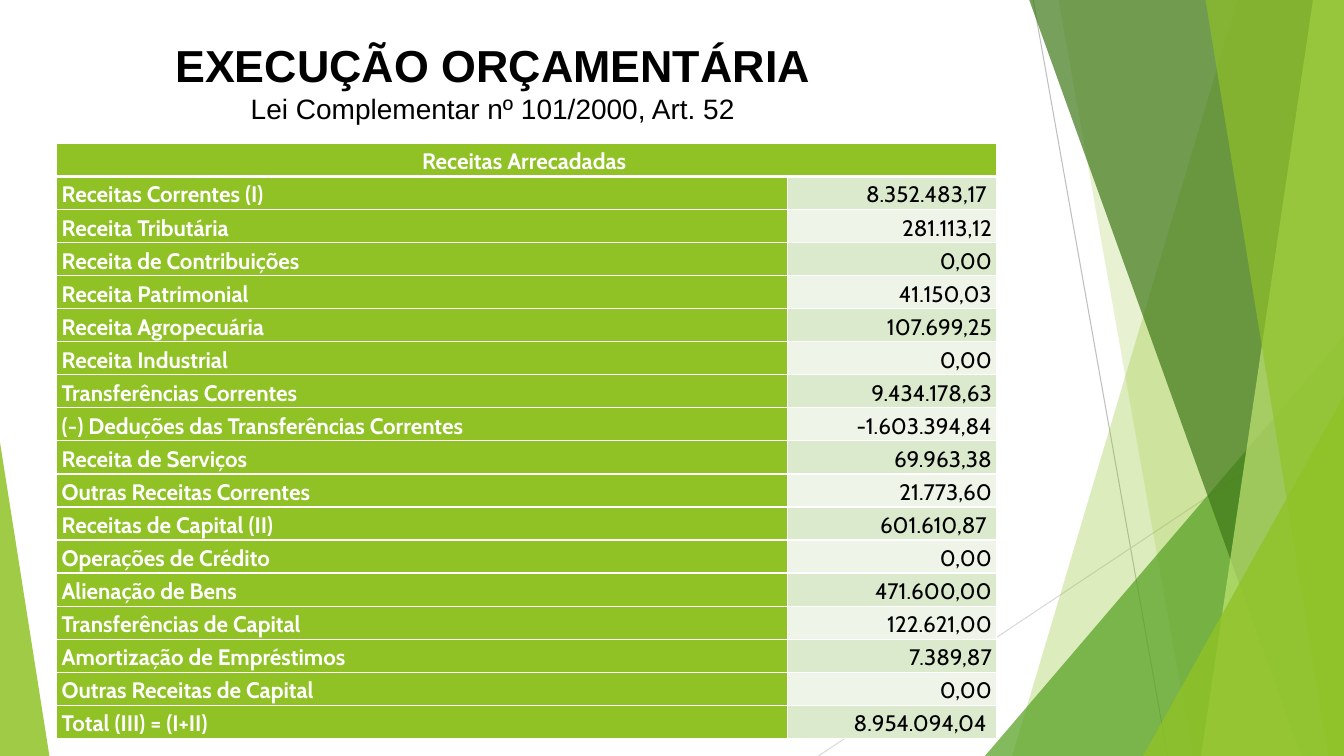
"""Builds the budget execution slide with its table of collected revenue."""
from lxml import etree
from pptx import Presentation
from pptx.dml.color import RGBColor
from pptx.enum.shapes import MSO_CONNECTOR, MSO_SHAPE
from pptx.enum.text import MSO_ANCHOR, MSO_AUTO_SIZE, PP_ALIGN
from pptx.oxml.ns import qn
from pptx.util import Pt

LEFT, CENTER, RIGHT = PP_ALIGN.LEFT, PP_ALIGN.CENTER, PP_ALIGN.RIGHT
MIDDLE = MSO_ANCHOR.MIDDLE
STRAIGHT = MSO_CONNECTOR.STRAIGHT
TRIANGLE = MSO_SHAPE.ISOSCELES_TRIANGLE
FIT_SHAPE = MSO_AUTO_SIZE.SHAPE_TO_FIT_TEXT

WIDTH, HEIGHT = 960, 540
TOP = -0.6
GREEN, WHITE, BLACK = "90C226", "FFFFFF", "000000"
BANDS = ("DBE9CD", "EEF4E8")

TITLE = "Receitas Arrecadadas "
REVENUES = [
    ("Receitas Correntes (I)", "8.352.483,17 "),
    ("Receita Tributária", "281.113,12"),
    ("Receita de Contribuições", "0,00"),
    ("Receita Patrimonial", "41.150,03"),
    ("Receita Agropecuária", "107.699,25"),
    ("Receita Industrial", "0,00"),
    ("Transferências Correntes", "9.434.178,63"),
    ("(-) Deduções das Transferências Correntes", "-1.603.394,84"),
    ("Receita de Serviços", "69.963,38"),
    ("Outras Receitas Correntes", "21.773,60"),
    ("Receitas de Capital (II)", "601.610,87 "),
    ("Operações de Crédito", "0,00"),
    ("Alienação de Bens", "471.600,00"),
    ("Transferências de Capital", "122.621,00"),
    ("Amortização de Empréstimos", "7.389,87"),
    ("Outras Receitas de Capital", "0,00"),
    ("Total (III) = (I+II)", "8.954.094,04 "),
]


def rgb(value):
    return RGBColor.from_string(value)


class SlideBuilder:
    """Holds the slide and its style, and adds each kind of element."""

    def __init__(self, slide, table_font="Cabin", title_font="Arial"):
        self.s = slide
        self.table_font = table_font
        self.title_font = title_font

    def line(self, x1, y1, x2, y2, color):
        cx = self.s.shapes.add_connector(STRAIGHT, Pt(x1), Pt(y1), Pt(x2), Pt(y2))
        cx.line.color.rgb = rgb(color)
        cx.line.width = Pt(0.75)
        etree.SubElement(cx._element.spPr, qn("a:effectLst"))

    def paint(self, sp, color, opacity):
        sp.shadow.inherit = False
        sp.line.fill.background()
        sp.fill.solid()
        sp.fill.fore_color.rgb = rgb(color)
        clr = sp._element.spPr.find(qn("a:solidFill"))[0]
        etree.SubElement(clr, qn("a:alpha"), val=str(opacity * 1000))

    def ray(self, top_x, bottom_x, color, opacity):
        fb = self.s.shapes.build_freeform(Pt(top_x), Pt(TOP))
        corners = [(WIDTH, TOP), (WIDTH, HEIGHT), (bottom_x, HEIGHT)]
        fb.add_line_segments([(Pt(x), Pt(y)) for x, y in corners], close=True)
        self.paint(fb.convert_to_shape(), color, opacity)

    def triangle(self, x, y, w, apex, color, opacity):
        sp = self.s.shapes.add_shape(TRIANGLE, Pt(x), Pt(y), Pt(w), Pt(HEIGHT - y))
        sp.adjustments[0] = apex
        self.paint(sp, color, opacity)

    def set_text(self, p, text, size, font, color, bold, align):
        p.text = text
        p.alignment = align
        for r in p.runs:
            r.font.size = Pt(size)
            r.font.name = font
            r.font.bold = bold
            r.font.color.rgb = rgb(color)

    def heading(self, x, y, w, h, title, subtitle):
        tb = self.s.shapes.add_textbox(Pt(x), Pt(y), Pt(w), Pt(h))
        tf = tb.text_frame
        tf.word_wrap = True
        tf.auto_size = FIT_SHAPE
        tf.vertical_anchor = MIDDLE
        self.set_text(tf.paragraphs[0], title, 32, self.title_font, BLACK, True, CENTER)
        self.set_text(tf.add_paragraph(), subtitle, 20, self.title_font, BLACK, False, CENTER)

    def border(self, cell, **widths):
        tc_pr = cell._tc.get_or_add_tcPr()
        for side in "LRTB":
            width = Pt(widths.get(side, 1))
            ln = etree.SubElement(tc_pr, qn(f"a:ln{side}"), w=str(int(width)))
            fill = etree.SubElement(ln, qn("a:solidFill"))
            etree.SubElement(fill, qn("a:srgbClr"), val=WHITE)

    def cell(self, cell, text, fill, color, bold, align, **widths):
        cell.margin_left = cell.margin_right = Pt(3.6)
        cell.margin_top = cell.margin_bottom = Pt(0.7)
        cell.vertical_anchor = MIDDLE
        self.border(cell, **widths)
        cell.fill.solid()
        cell.fill.fore_color.rgb = rgb(fill)
        p = cell.text_frame.paragraphs[0]
        self.set_text(p, text, 16, self.table_font, color, bold, align)
        p.line_spacing = 1.15

    def table(self, x, y, col_widths, row_height, title, rows):
        count = len(rows) + 1
        frame = self.s.shapes.add_table(count, 2, Pt(x), Pt(y), Pt(sum(col_widths)),
                                        Pt(row_height * count))
        tbl = frame.table
        for col, width in zip(tbl.columns, col_widths):
            col.width = Pt(width)
        for row in tbl.rows:
            row.height = Pt(row_height)
        for i, text in enumerate((title, "")):
            self.cell(tbl.cell(0, i), text, GREEN, WHITE, True, CENTER, B=3)
        tbl.cell(0, 0).merge(tbl.cell(0, 1))
        for i, (name, value) in enumerate(rows, 1):
            top = 3 if i == 1 else 1
            self.cell(tbl.cell(i, 0), name, GREEN, WHITE, True, LEFT, T=top)
            self.cell(tbl.cell(i, 1), value, BANDS[(i - 1) % 2], BLACK, False, RIGHT, T=top)


def main():
    prs = Presentation()
    prs.slide_width, prs.slide_height = Pt(WIDTH), Pt(HEIGHT)
    b = SlideBuilder(prs.slides.add_slide(prs.slide_layouts[6]))
    b.line(738, 0, 834, HEIGHT, "BFBFBF")
    b.line(WIDTH, 290, 584.6, HEIGHT, "D9D9D9")
    b.ray(884, 723, GREEN, 30)
    b.ray(756, 852, GREEN, 20)
    b.triangle(703.5, 240, 256.5, 1, "54A021", 72)
    b.ray(735, 929.5, "3F7819", 70)
    b.ray(938, 858, "C0E474", 70)
    b.ray(861, 949, GREEN, 65)
    b.triangle(816.5, 283, 143.5, 1, GREEN, 80)
    b.triangle(0, 316, 35.3, 0, GREEN, 85)
    b.table(40.5, 102.4, (522, 149.5), 23.56, TITLE, REVENUES)
    b.heading(13.7, 23, 676.8, 70.6, "EXECUÇÃO ORÇAMENTÁRIA",
              "Lei Complementar nº 101/2000, Art. 52")
    prs.save("out.pptx")


if __name__ == "__main__":
    main()
